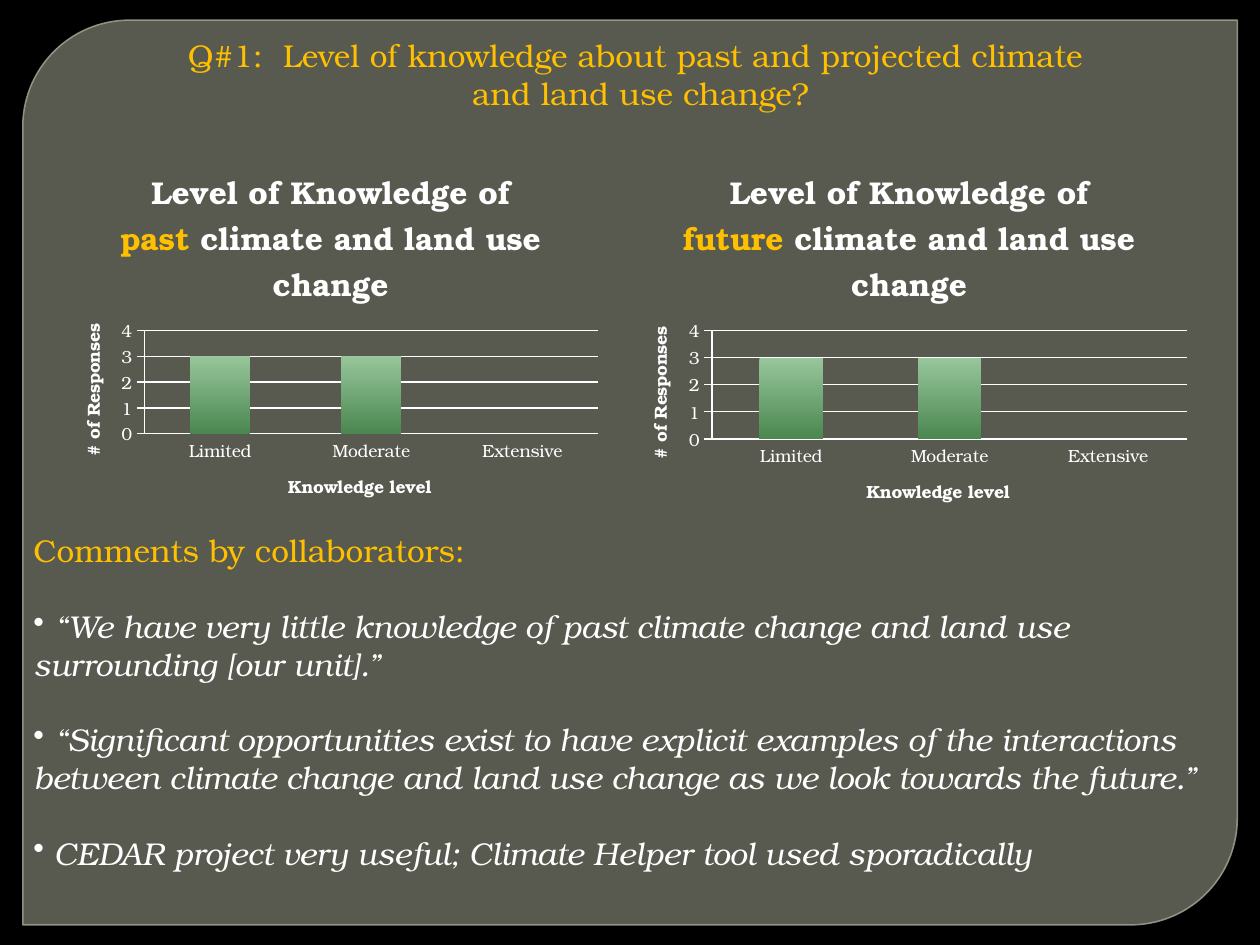
import pptx
import pptx.chart.data
import pptx.dml.color
import pptx.enum.chart
import pptx.enum.shapes
import pptx.enum.text
import pptx.oxml
import pptx.oxml.ns
import pptx.util

Pt = pptx.util.Pt
RGB = pptx.dml.color.RGBColor
qn = pptx.oxml.ns.qn

FONT = "TeX Gyre Bonum"
BLACK = RGB(0x00, 0x00, 0x00)
WHITE = RGB(0xFF, 0xFF, 0xFF)
GOLD = RGB(0xFF, 0xC0, 0x00)
PANEL = RGB(0x88, 0x8B, 0x7B)
PANEL_LINE = RGB(0x9D, 0xA0, 0x90)
BAR_TOP = RGB(0x97, 0xC6, 0x9B)
BAR_BOTTOM = RGB(0x4B, 0x87, 0x50)

# Content
HEADING = ["Q#1:  Level of knowledge about past and projected climate ",
           "and land use change?"]
COMMENTS_TITLE = "Comments by collaborators:"
COMMENTS = [
    " “We have very little knowledge of past climate change and land use surrounding [our unit].”",
    " “Significant opportunities exist to have explicit examples of the interactions "
    "between climate change and land use change as we look towards the future.”",
    " CEDAR project very useful; Climate Helper tool used sporadically",
]
LEVELS = ["Limited", "Moderate", "Extensive"]
CHARTS = [  # highlighted word, responses, (left, top, width, height)
    ("past", (3, 3, 0), (30, 84, 318, 216)),
    ("future", (3, 3, 0), (354, 84, 331, 219)),
]


def style(font, size, color, bold=False, italic=False):
    font.name, font.size = FONT, Pt(size)
    font.bold, font.italic = bold, italic
    font.color.rgb = color


def set_alpha(fill_parent, percent):
    color = fill_parent.find(qn("a:solidFill"))[0]
    alpha = pptx.oxml.parse_xml(
        '<a:alpha xmlns:a="http://schemas.openxmlformats.org/drawingml/2006/main" '
        f'val="{percent * 1000}"/>')
    color.append(alpha)


def add_text_box(page, area, lines):
    box = page.shapes.add_textbox(*map(Pt, area))
    box.text_frame.word_wrap = True
    box.text_frame.text = "\n".join(lines)
    return box.text_frame


def add_bullet(para):
    bullet = para._p.get_or_add_pPr().makeelement(qn("a:buChar"), {"char": "•"})
    para._p.get_or_add_pPr().append(bullet)


def style_axis(axis, title):
    axis.has_title = True
    axis.axis_title.text_frame.text = title
    style(axis.axis_title.text_frame.paragraphs[0].runs[0].font, 10, WHITE, bold=True)
    style(axis.tick_labels.font, 10, WHITE)
    axis.format.line.color.rgb = WHITE
    axis.format.line.width = Pt(0.75)


def add_level_chart(page, word, responses, area):
    data = pptx.chart.data.CategoryChartData()
    data.categories = LEVELS
    data.add_series("Series 1", responses)
    chart = page.shapes.add_chart(
        pptx.enum.chart.XL_CHART_TYPE.COLUMN_CLUSTERED, *map(Pt, area), data).chart
    style(chart.font, 10, WHITE)
    chart.has_legend = False

    # Title with one highlighted word
    chart.has_title = True
    para = chart.chart_title.text_frame.paragraphs[0]
    for text, color in (("Level of Knowledge of ", WHITE), (word, GOLD),
                        (" climate and land use change", WHITE)):
        span = para.add_run()
        span.text = text
        style(span.font, 18, color, bold=True)
    chart.chart_title.include_in_layout = False

    # Axes
    ticks = pptx.enum.chart.XL_TICK_MARK
    style_axis(chart.category_axis, "Knowledge level")
    chart.category_axis.major_tick_mark = ticks.NONE
    values = chart.value_axis
    style_axis(values, "# of Responses")
    values.major_tick_mark = ticks.OUTSIDE
    values.minimum_scale, values.maximum_scale, values.major_unit = 0, 4, 1
    values.has_major_gridlines = True
    values.major_gridlines.format.line.color.rgb = WHITE
    values.major_gridlines.format.line.width = Pt(0.75)

    # Bars
    plot = chart.plots[0]
    plot.gap_width = 150
    plot.vary_by_categories = False
    fill = plot.series[0].format.fill
    fill.gradient()
    fill.gradient_angle = 270
    for stop, color in zip(fill.gradient_stops, (BAR_TOP, BAR_BOTTOM)):
        stop.color.rgb = color


def main():
    deck = pptx.Presentation()
    deck.slide_width, deck.slide_height = Pt(720), Pt(540)
    page = deck.slides.add_slide(deck.slide_layouts[6])
    page.background.fill.solid()
    page.background.fill.fore_color.rgb = BLACK

    # Panel with two rounded corners
    panel = page.shapes.add_shape(
        pptx.enum.shapes.MSO_SHAPE.ROUND_2_DIAG_RECTANGLE,
        Pt(13), Pt(11.5), Pt(694), Pt(517))
    panel.shadow.inherit = False
    panel.adjustments[0], panel.adjustments[1] = 0.118, 0
    panel.fill.solid()
    panel.fill.fore_color.rgb = PANEL
    panel.line.color.rgb = PANEL_LINE
    panel.line.width = Pt(0.87)
    set_alpha(panel._element.spPr, 65)
    set_alpha(panel._element.spPr.find(qn("a:ln")), 88)

    # Heading
    frame = add_text_box(page, (60, 16.5, 612, 51), HEADING)
    frame.vertical_anchor = pptx.enum.text.MSO_ANCHOR.MIDDLE
    for para in frame.paragraphs:
        para.alignment = pptx.enum.text.PP_ALIGN.CENTER
        style(para.runs[0].font, 18, GOLD)

    # Comments
    frame = add_text_box(page, (12, 300, 708, 225), [COMMENTS_TITLE] + COMMENTS)
    for index, para in enumerate(frame.paragraphs):
        para.space_after = Pt(21.6)
        is_comment = index > 0
        style(para.runs[0].font, 18, WHITE if is_comment else GOLD, italic=is_comment)
        if is_comment:
            add_bullet(para)

    for word, responses, area in CHARTS:
        add_level_chart(page, word, responses, area)

    deck.save("out.pptx")


if __name__ == "__main__":
    main()
